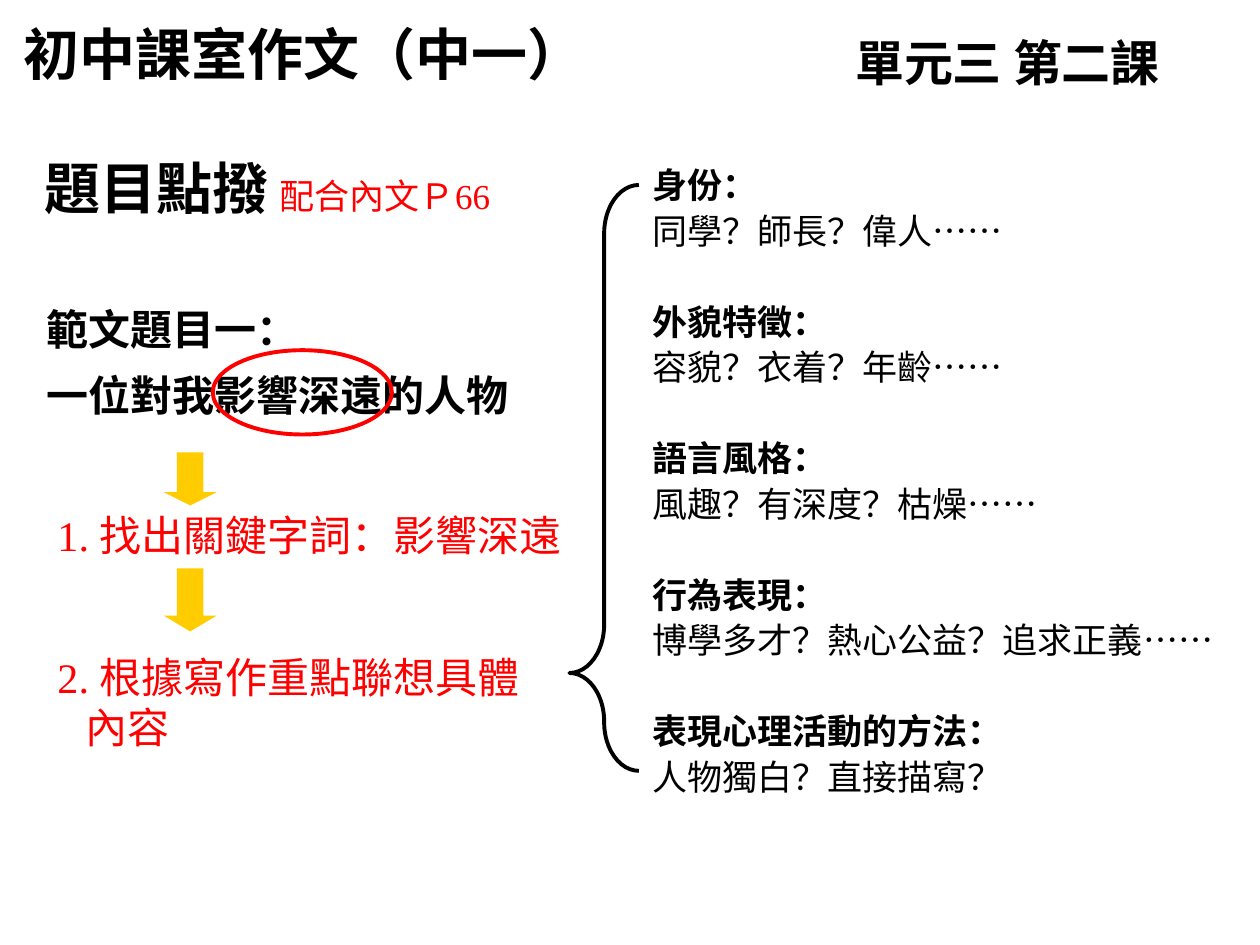
import pptx
import pptx.util
import pptx.dml.color
import pptx.enum.shapes
import pptx.enum.text
import pptx.oxml
import pptx.oxml.ns

Cm, Pt = pptx.util.Cm, pptx.util.Pt
KIND = pptx.enum.shapes.MSO_SHAPE
ANCHOR = pptx.enum.text.MSO_ANCHOR
HUES = {"ink": "000000", "red": "FF0000", "gold": "FFCC00"}
SANS, SERIF, CJK = "DejaVu Sans", "Times New Roman", "Noto Sans CJK SC"


def hue(name):
    return pptx.dml.color.RGBColor.from_string(HUES[name])


def assign(item, values):
    for key, value in values.items():
        setattr(item, key, value)


def add_run(para, text, face, size, color="ink", bold=False):
    run = para.add_run()
    run.text = text
    assign(run.font, {"name": face, "size": Pt(size), "bold": bold})
    run.font.color.rgb = hue(color)
    east = pptx.oxml.ns.qn("a:ea")
    run.font._element.makeelement(east, {})
    node = pptx.oxml.parse_xml(
        '<a:ea xmlns:a="http://schemas.openxmlformats.org/drawingml/2006/main"'
        f' typeface="{CJK}"/>')
    run.font._element.append(node)


def set_frame(shape, anchor):
    frame = shape.text_frame
    assign(frame, {
        "word_wrap": True,
        "auto_size": pptx.enum.text.MSO_AUTO_SIZE.NONE,
        "vertical_anchor": anchor,
        "margin_left": Cm(0.25), "margin_right": Cm(0.25),
        "margin_top": Cm(0.13), "margin_bottom": Cm(0.13),
    })
    return frame


def add_text(slide, left, top, width, height, lines, pitch=None):
    box = slide.shapes.add_textbox(Cm(left), Cm(top), Cm(width), Cm(height))
    frame = set_frame(box, ANCHOR.TOP if pitch else ANCHOR.MIDDLE)
    for index, runs in enumerate(lines):
        para = frame.paragraphs[0] if index == 0 else frame.add_paragraph()
        if pitch:
            para.line_spacing = Pt(pitch)
        for run in runs:
            add_run(para, *run)
    return frame


def add_form(slide, kind, left, top, width, height,
             fill=None, line=None, bends=()):
    form = slide.shapes.add_shape(
        kind, Cm(left), Cm(top), Cm(width), Cm(height))
    form.shadow.inherit = False
    if fill:
        form.fill.solid()
        form.fill.fore_color.rgb = hue(fill)
    else:
        form.fill.background()
    if line:
        form.line.color.rgb = hue(line)
        form.line.width = Pt(2.25)
    else:
        form.line.fill.background()
    for index, bend in enumerate(bends):
        form.adjustments[index] = bend


def add_header(slide, left, top):
    title = slide.shapes.title
    assign(title, {"left": Cm(left), "top": Cm(top),
                   "width": Cm(13.26), "height": Cm(1.6)})
    para = set_frame(title, ANCHOR.MIDDLE).paragraphs[0]
    para.alignment = pptx.enum.text.PP_ALIGN.LEFT
    add_run(para, "初中課室作文（中一）", "Roboto", 32, "ink", True)
    add_text(slide, left + 16.76, top + 0.25, 8.4, 1.45,
             [[("單元三 第二課", "Roboto", 28, "ink", True)]])


def add_topic(slide, left, top):
    add_text(slide, left, top, 7.82, 1.6,
             [[("題目點撥", "Arial", 32, "ink", True)]])
    add_text(slide, left + 4.75, top + 0.43, 6.27, 1.09,
             [[("配合內文Ｐ66", SERIF, 20, "red")]])


def add_sample(slide, left, top):
    lines = ["範文題目一：", "一位對我影響深遠的人物"]
    add_text(slide, left, top, 12.7, 2.9,
             [[(line, SANS, 24, "ink", True)] for line in lines], 38)
    add_form(slide, KIND.OVAL, left + 3.6, top + 1.4, 3.61, 1.7, line="red")


def add_steps(slide, left, top):
    for drop, tall, bend in [(0, 1.07, 0.25), (2.34, 1.27, 0.3)]:
        add_form(slide, KIND.DOWN_ARROW, left + 2.39, top + drop, 1.07, tall,
                 fill="gold", bends=(0.5, bend))
    find = [("1. ", SERIF, 24, "red"),
            ("找出關鍵字詞：影響深遠", SANS, 24, "red")]
    link = [("2. ", SERIF, 24, "red"),
            ("根據寫作重點聯想具體", SANS, 24, "red")]
    rest = [("內容", SANS, 24, "red")]
    add_text(slide, left, top + 1.02, 11, 1.27, [find])
    frame = add_text(slide, left, top + 3.89, 10.59, 2.31, [link, rest], 28.6)
    frame.paragraphs[1]._p.get_or_add_pPr().set("marL", str(Cm(0.56)))


def add_aspects(slide, left, top):
    add_form(slide, KIND.LEFT_BRACE, left, top + 0.63, 1.4, 11.81,
             line="ink", bends=(0.699, 0.833))
    aspects = [
        ("身份：", "同學？師長？偉人", "……"),
        ("外貌特徵：", "容貌？衣着？年齡", "……"),
        ("語言風格：", "風趣？有深度？枯燥", "……"),
        ("行為表現：", "博學多才？熱心公益？追求正義", "……"),
        ("表現心理活動的方法：", "人物獨白？直接描寫？", ""),
    ]
    lines = []
    for head, body, dots in aspects:
        lines.append([(head, SANS, 20, "ink", True)])
        tail = [(dots, CJK, 20)] if dots else []
        lines.append([(body, SANS, 20)] + tail)
    frame = add_text(slide, left + 1.42, top, 12.5, 15.77, lines, 26)
    for para in frame.paragraphs[2::2]:
        para.space_before = Pt(26)


def main():
    deck = pptx.Presentation()
    assign(deck, {"slide_width": Cm(25.4), "slide_height": Cm(19.05)})
    slide = deck.slides.add_slide(deck.slide_layouts[5])
    add_header(slide, 0.23, 0.28)
    add_topic(slide, 0.64, 2.97)
    add_sample(slide, 0.69, 5.66)
    add_steps(slide, 0.91, 9.12)
    add_aspects(slide, 11.48, 3.1)
    deck.save("out.pptx")


if __name__ == "__main__":
    main()
